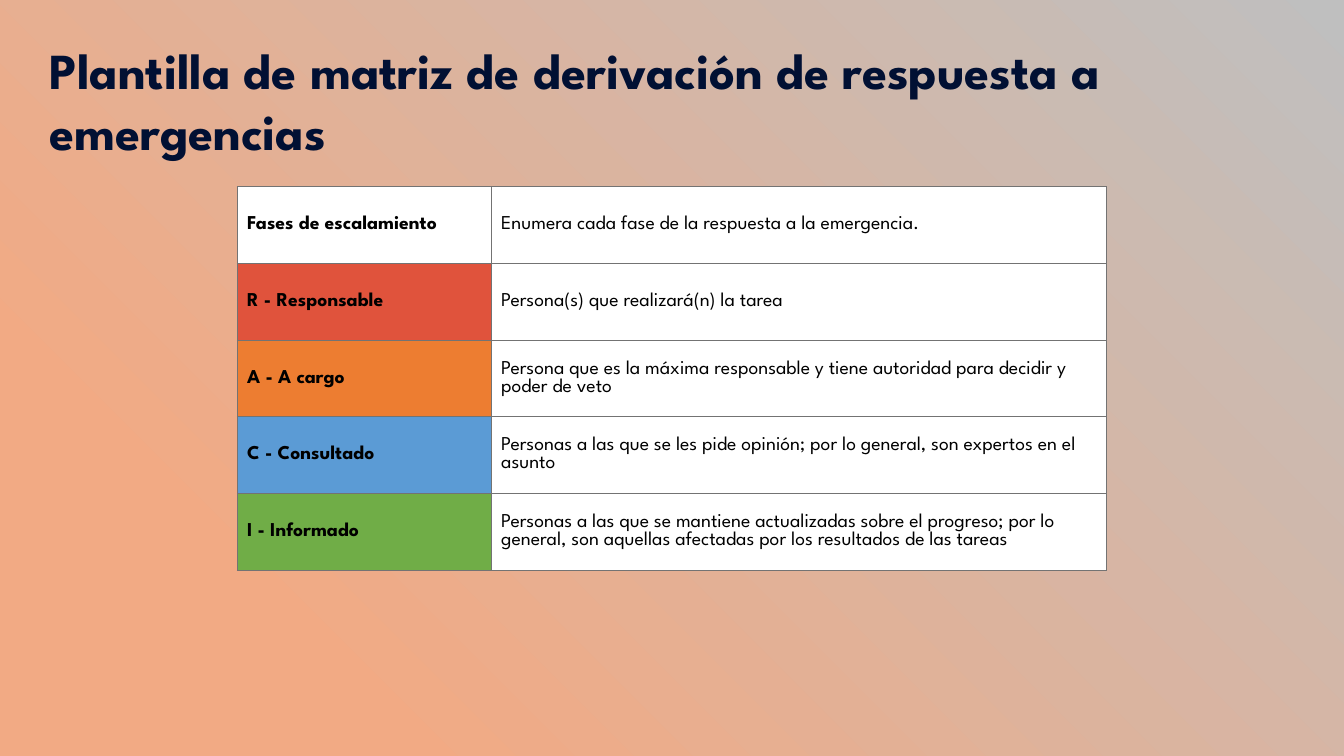
from lxml.etree import SubElement
from pptx import Presentation
from pptx.dml.color import RGBColor
from pptx.enum.text import MSO_ANCHOR as Anchor, MSO_AUTO_SIZE as AutoSize
from pptx.oxml.ns import qn
from pptx.util import Cm, Pt

FONT = "League Spartan"
TITLE = "Plantilla de matriz de derivación de respuesta a emergencias"
ROLES = [
    ("Fases de escalamiento", "FFFFFF",
     "Enumera cada fase de la respuesta a la emergencia."),
    ("R - Responsable", "E0533C", "Persona(s) que realizará(n) la tarea"),
    ("A - A cargo", "ED7D31",
     "Persona que es la máxima responsable y tiene autoridad para decidir y poder de veto"),
    ("C - Consultado", "5B9BD5",
     "Personas a las que se les pide opinión; por lo general, son expertos en el asunto"),
    ("I - Informado", "70AD47",
     "Personas a las que se mantiene actualizadas sobre el progreso; por lo general, "
     "son aquellas afectadas por los resultados de las tareas"),
]


def rgb(value):
    """Turn a hex string into a colour."""
    return RGBColor.from_string(value)


def style_text(p, size, color, bold):
    """Format every run of a paragraph."""
    for r in p.runs:
        r.font.name = FONT
        r.font.size = Pt(size)
        r.font.bold = bold
        r.font.color.rgb = rgb(color)


def paint_background(slide):
    """Fill the slide with a gradient spreading from the bottom left corner."""
    fill = slide.background.fill
    fill.gradient()
    for stop, (position, color) in zip(fill.gradient_stops, [(0.19, "F2AA84"), (1, "BFBFBF")]):
        stop.position = position
        stop.color.rgb = rgb(color)
    grad = next(slide.element.iter(qn("a:gradFill")))
    for lin in grad.findall(qn("a:lin")):
        grad.remove(lin)
    shade = SubElement(grad, qn("a:path"))
    shade.set("path", "circle")
    focus = SubElement(shade, qn("a:fillToRect"))
    focus.set("t", "100000")
    focus.set("r", "100000")


def add_title(slide, left, top, width, height):
    """Place the slide title in the given box."""
    tf = slide.shapes.add_textbox(left, top, width, height).text_frame
    tf.word_wrap = True
    tf.auto_size = AutoSize.SHAPE_TO_FIT_TEXT
    tf.margin_left = tf.margin_right = tf.margin_top = tf.margin_bottom = Cm(0.25)
    tf.text = TITLE
    p = tf.paragraphs[0]
    p.line_spacing = Pt(43.5)
    style_text(p, 36, "011033", True)


def outline_cell(cell, color, width):
    """Draw a thin line on the four sides of a cell."""
    props = cell._tc.get_or_add_tcPr()
    for side in ("lnL", "lnR", "lnT", "lnB"):
        line = SubElement(props, qn(f"a:{side}"))
        line.set("w", str(Pt(width)))
        solid = SubElement(line, qn("a:solidFill"))
        SubElement(solid, qn("a:srgbClr")).set("val", color)


def fill_cell(cell, text, color, bold):
    """Write and format one cell of the matrix."""
    outline_cell(cell, "737373", 0.5)
    cell.fill.solid()
    cell.fill.fore_color.rgb = rgb(color)
    cell.vertical_anchor = Anchor.MIDDLE
    cell.margin_left = Cm(0.25)
    cell.margin_right = cell.margin_top = cell.margin_bottom = 0
    cell.text = text
    style_text(cell.text_frame.paragraphs[0], 14, "000000", bold)


def add_matrix(slide, left, top, width, height):
    """Place the table of roles in the given box."""
    table = slide.shapes.add_table(len(ROLES), 2, left, top, width, height).table
    table.first_row = table.horz_banding = False
    table.columns[0].width = Cm(6.4)
    table.columns[1].width = width - Cm(6.4)
    for i, (role, color, meaning) in enumerate(ROLES):
        fill_cell(table.cell(i, 0), role, color, True)
        fill_cell(table.cell(i, 1), meaning, "FFFFFF", False)


def main():
    """Build the slide and save it."""
    prs = Presentation()
    prs.slide_width, prs.slide_height = Cm(33.87), Cm(19.05)
    slide = prs.slides.add_slide(prs.slide_layouts[6])
    paint_background(slide)
    add_title(slide, Cm(1), Cm(0.72), Cm(30.73), Cm(2.06))
    add_matrix(slide, Cm(5.98), Cm(4.7), Cm(21.9), Cm(9.67))
    prs.save("out.pptx")


if __name__ == "__main__":
    main()
